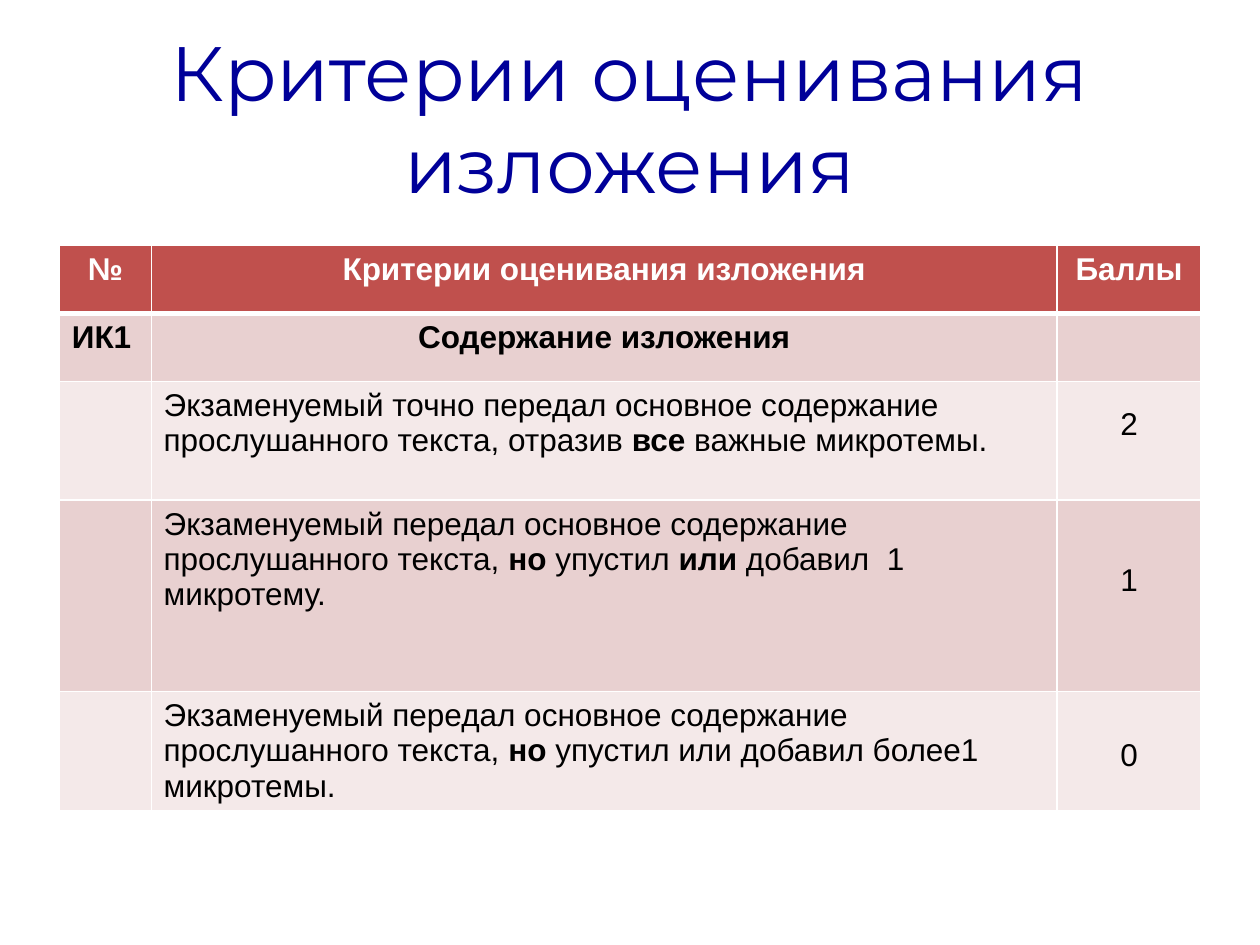
from lxml.etree import SubElement
from pptx import Presentation
from pptx.dml.color import RGBColor
from pptx.enum.text import MSO_ANCHOR as Anchor, PP_ALIGN as Align
from pptx.oxml.ns import qn
from pptx.util import Cm, Pt


def color(hex_string):
    return RGBColor.from_string(hex_string)


def add_border(cell, side, points):
    line = SubElement(cell._tc.get_or_add_tcPr(), qn(f"a:ln{side}"), w=str(Pt(points)))
    fill = SubElement(line, qn("a:solidFill"))
    SubElement(fill, qn("a:srgbClr"), val="FFFFFF")


prs = Presentation()
prs.slide_width, prs.slide_height = Cm(25.4), Cm(19.05)
slide = prs.slides.add_slide(prs.slide_layouts[5])

title = slide.shapes.title
title.left, title.top, title.width, title.height = Cm(1.27), Cm(0.76), Cm(22.86), Cm(3.18)
title.text_frame.text = "Критерии оценивания изложения"
title.text_frame.vertical_anchor = Anchor.MIDDLE
heading = title.text_frame.paragraphs[0]
heading.alignment = Align.CENTER
heading.font.name = "Montserrat"
heading.font.size = Pt(44)
heading.font.color.rgb = color("000099")

# Asterisks enclose the bold words.
criteria = [
    ("*№*", "*Критерии оценивания изложения*", "*Баллы*"),
    ("*ИК1*", "*Содержание изложения*", ""),
    ("", "Экзаменуемый точно передал основное содержание прослушанного текста, "
         "отразив *все* важные микротемы.", "2"),
    ("", "Экзаменуемый передал основное содержание прослушанного текста, "
         "*но* упустил *или* добавил  1 микротему.", "1"),
    ("", "Экзаменуемый передал основное содержание прослушанного текста, "
         "*но* упустил или добавил более1 микротемы.", "0"),
]
column_widths = [1.85, 18.26, 2.9]
row_heights = [1.37, 1.37, 2.39, 3.86, 2.39]
row_fills = ["C0504D", "E8D0D0", "F4E9E9", "E8D0D0", "F4E9E9"]
score_tops = [0.13, 0.13, 0.51, 1.26, 0.93]

table = slide.shapes.add_table(
    len(criteria), len(column_widths), Cm(1.2), Cm(4.95),
    Cm(sum(column_widths)), Cm(sum(row_heights))).table
for column, width in zip(table.columns, column_widths):
    column.width = Cm(width)

for r, texts in enumerate(criteria):
    table.rows[r].height = Cm(row_heights[r])
    for c, text in enumerate(texts):
        cell = table.cell(r, c)
        for side in "LRTB":
            header_edge = (r, side) in [(0, "B"), (1, "T")]
            add_border(cell, side, 3 if header_edge else 1)
        cell.fill.solid()
        cell.fill.fore_color.rgb = color(row_fills[r])
        cell.margin_left = cell.margin_right = Cm(0.25)
        cell.margin_top = Cm(score_tops[r] if c == 2 else 0.13)
        cell.margin_bottom = Cm(0.13)
        cell.vertical_anchor = Anchor.TOP

        paragraph = cell.text_frame.paragraphs[0]
        centered = r == 0 or c == 2 or (r, c) == (1, 1)
        paragraph.alignment = Align.CENTER if centered else Align.LEFT
        paragraph.font.name = "Arial"
        paragraph.font.size = Pt(18)
        paragraph.font.color.rgb = color("FFFFFF" if r == 0 else "000000")
        for i, part in enumerate(text.split("*")):
            if part:
                run = paragraph.add_run()
                run.text = part
                run.font.bold = i % 2 == 1

prs.save("out.pptx")
